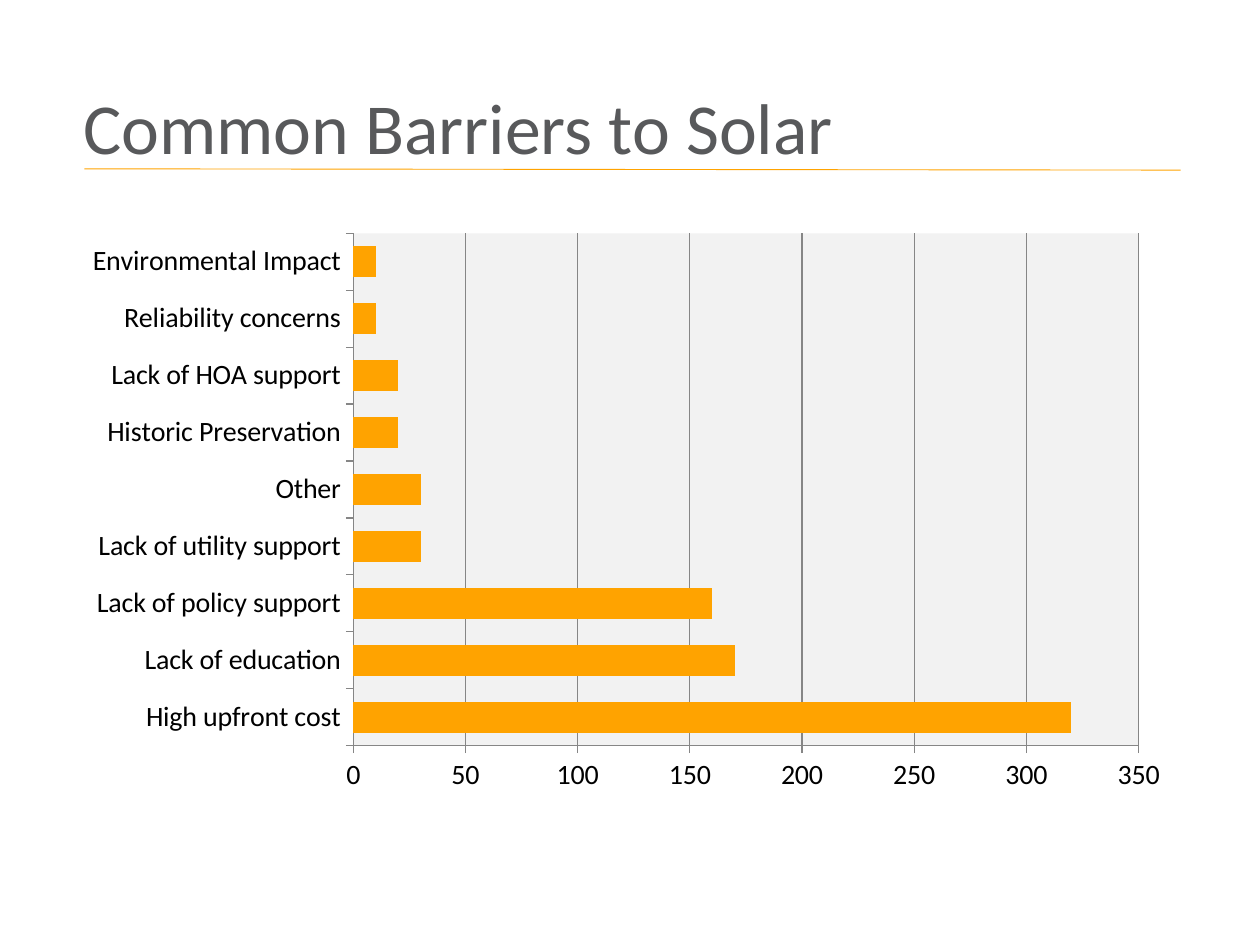
"""Build the slide on common barriers to solar: a title, a rule and a bar chart."""
from dataclasses import dataclass

from lxml import etree
from pptx import Presentation
from pptx.chart.axis import CategoryAxis, ValueAxis
from pptx.chart.data import CategoryChartData
from pptx.dml.color import RGBColor
from pptx.enum.chart import XL_CHART_TYPE, XL_TICK_MARK
from pptx.enum.shapes import MSO_CONNECTOR
from pptx.enum.text import MSO_ANCHOR, MSO_AUTO_SIZE, PP_ALIGN
from pptx.oxml import parse_xml
from pptx.oxml.ns import nsdecls, qn
from pptx.slide import Slide
from pptx.util import Inches, Pt

BAR_CLUSTERED = XL_CHART_TYPE.BAR_CLUSTERED
TICK_OUTSIDE = XL_TICK_MARK.OUTSIDE
STRAIGHT = MSO_CONNECTOR.STRAIGHT
ANCHOR_MIDDLE = MSO_ANCHOR.MIDDLE
NO_AUTOFIT = MSO_AUTO_SIZE.NONE
ALIGN_LEFT = PP_ALIGN.LEFT
TITLE_ONLY = 5


@dataclass(frozen=True)
class Theme:
    font: str = "Calibri"
    chart_font: str = "Arial"
    title_size: float = 41
    axis_size: float = 16
    chart_size: float = 10
    title_color: str = "58595B"
    accent: str = "FFA300"
    text: str = "000000"
    grid: str = "868686"
    plot: str = "F2F2F2"


@dataclass(frozen=True)
class Box:
    left: float
    top: float
    width: float
    height: float

    def lengths(self) -> tuple[Inches, ...]:
        return tuple(Inches(n) for n in (self.left, self.top, self.width, self.height))


@dataclass(frozen=True)
class Barrier:
    label: str
    count: int


THEME = Theme()
TITLE_BOX = Box(0.56, 0.74, 8.84, 0.6)
CHART_BOX = Box(0.56, 1.76, 8.82, 4.62)
BARRIERS = (
    Barrier("High upfront cost", 320),
    Barrier("Lack of education", 170),
    Barrier("Lack of policy support", 160),
    Barrier("Lack of utility support", 30),
    Barrier("Other", 30),
    Barrier("Historic Preservation", 20),
    Barrier("Lack of HOA support", 20),
    Barrier("Reliability concerns", 10),
    Barrier("Environmental Impact", 10),
)


def color(value: str) -> RGBColor:
    return RGBColor.from_string(value)


def add_rule(slide: Slide) -> None:
    ends = (Inches(n) for n in (0.67, 1.34, 9.37, 1.35))
    rule = slide.shapes.add_connector(STRAIGHT, *ends)
    rule.line.color.rgb = color(THEME.accent)
    rule.line.width = Pt(0.5)
    etree.SubElement(rule._element.spPr, qn("a:effectLst"))


def set_title(slide: Slide, text: str) -> None:
    title = slide.shapes.title
    title.left, title.top, title.width, title.height = TITLE_BOX.lengths()
    frame = title.text_frame
    frame.text = text
    frame.auto_size = NO_AUTOFIT
    frame.vertical_anchor = ANCHOR_MIDDLE
    para = frame.paragraphs[0]
    para.alignment = ALIGN_LEFT
    para.line_spacing = 0.9
    font = para.runs[0].font
    font.name = THEME.font
    font.size = Pt(THEME.title_size)
    font.color.rgb = color(THEME.title_color)


def style_axis(axis: CategoryAxis | ValueAxis) -> None:
    axis.major_tick_mark = TICK_OUTSIDE
    axis.format.line.color.rgb = color(THEME.grid)
    font = axis.tick_labels.font
    font.name = THEME.font
    font.size = Pt(THEME.axis_size)
    font.color.rgb = color(THEME.text)


def add_barrier_chart(slide: Slide, barriers: tuple[Barrier, ...]) -> None:
    data = CategoryChartData()
    data.categories = [barrier.label for barrier in barriers]
    data.add_series("Series 1", [barrier.count for barrier in barriers])
    chart = slide.shapes.add_chart(BAR_CLUSTERED, *CHART_BOX.lengths(), data).chart
    chart.has_title = False
    chart.has_legend = False
    chart.font.name = THEME.chart_font
    chart.font.size = Pt(THEME.chart_size)
    chart.font.color.rgb = color(THEME.text)

    for axis in (chart.category_axis, chart.value_axis):
        style_axis(axis)
    values = chart.value_axis
    values.minimum_scale, values.maximum_scale, values.major_unit = 0, 350, 50
    values.has_major_gridlines = True
    values.major_gridlines.format.line.color.rgb = color(THEME.grid)

    plot = chart.plots[0]
    plot.gap_width = 85
    plot.vary_by_categories = False
    fill = plot.series[0].format.fill
    fill.solid()
    fill.fore_color.rgb = color(THEME.accent)
    chart._chartSpace.chart.plotArea.append(parse_xml(
        f'<c:spPr {nsdecls("c", "a")}><a:solidFill>'
        f'<a:srgbClr val="{THEME.plot}"/></a:solidFill></c:spPr>'
    ))


def main() -> None:
    deck = Presentation()
    deck.slide_width, deck.slide_height = Inches(10), Inches(7.5)
    page = deck.slides.add_slide(deck.slide_layouts[TITLE_ONLY])
    add_rule(page)
    set_title(page, "Common Barriers to Solar")
    add_barrier_chart(page, BARRIERS)
    deck.save("out.pptx")


if __name__ == "__main__":
    main()
